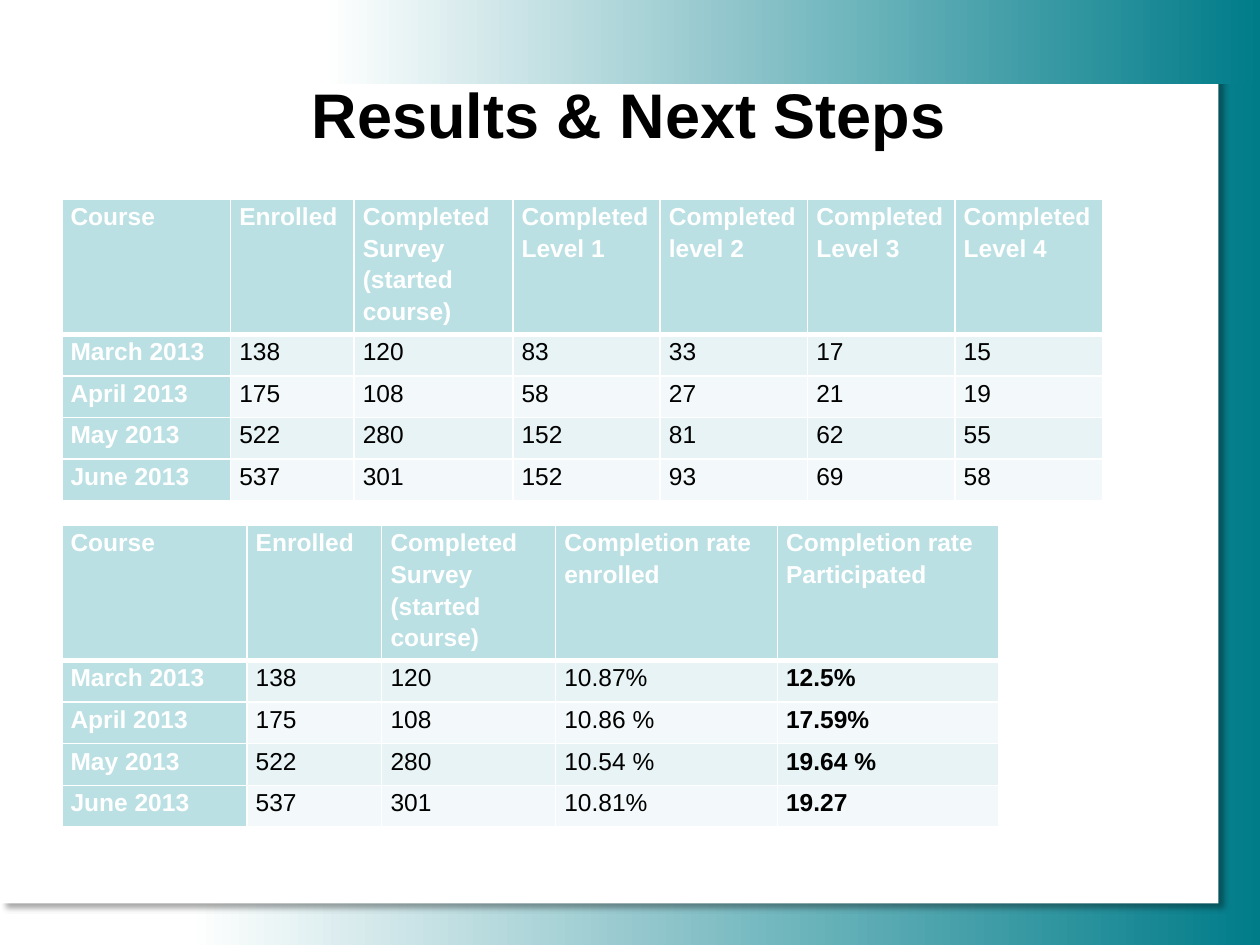
"""Build the course results slide with its two completion tables."""
from dataclasses import dataclass

from lxml import etree
from pptx import Presentation
from pptx import util as u
from pptx.dml.color import RGBColor
from pptx.enum import shapes, text
from pptx.oxml import parse_xml
from pptx.oxml.ns import nsdecls, qn
from pptx.shapes.autoshape import Shape
from pptx.slide import Slide
from pptx.table import _Cell

TEAL = RGBColor(0x00, 0x7C, 0x89)
WHITE = RGBColor(0xFF, 0xFF, 0xFF)
BLACK = RGBColor(0x00, 0x00, 0x00)
HEADER_FILL = RGBColor(0xBB, 0xE0, 0xE3)
BAND_FILLS = (RGBColor(0xE7, 0xF3, 0xF4), RGBColor(0xF3, 0xF9, 0xFA))
FONT = "Arial"
LEFT = 0.49
HEADER_HEIGHT = 1.01
ROW_HEIGHT = 0.33


@dataclass(frozen=True)
class Area:
    left: float
    top: float
    width: float
    height: float

    def lengths(self) -> tuple[u.Length, ...]:
        return tuple(u.Inches(n) for n in (self.left, self.top, self.width, self.height))


@dataclass(frozen=True)
class ResultTable:
    top: float
    widths: tuple[float, ...]
    rows: tuple[tuple[str, ...], ...]
    bold_columns: tuple[int, ...] = (0,)


GRADIENT_BANDS = (Area(0, 0.67, 10, 6.83), Area(1.25, 0, 8.75, 0.67))
PANEL = Area(0, 0, 9.67, 7.17)
TITLE = Area(LEFT, 0.31, 9, 0.94)

LEVELS = ResultTable(
    top=1.58,
    widths=(1.34, 0.98, 1.26, 1.17, 1.17, 1.17, 1.17),
    rows=(
        ("Course", "Enrolled", "Completed Survey (started course)", "Completed Level 1",
         "Completed level 2", "Completed Level 3", "Completed Level 4"),
        ("March 2013", "138", "120", "83", "33", "17", "15"),
        ("April 2013", "175", "108", "58", "27", "21", "19"),
        ("May 2013", "522", "280", "152", "81", "62", "55"),
        ("June 2013", "537", "301", "152", "93", "69", "58"),
    ),
)
RATES = ResultTable(
    top=4.17,
    widths=(1.47, 1.07, 1.38, 1.76, 1.76),
    rows=(
        ("Course", "Enrolled", "Completed Survey (started course)",
         "Completion rate enrolled", "Completion rate Participated"),
        ("March 2013", "138", "120", "10.87%", "12.5%"),
        ("April 2013", "175", "108", "10.86 %", "17.59%"),
        ("May 2013", "522", "280", "10.54 %", "19.64 %"),
        ("June 2013", "537", "301", "10.81%", "19.27"),
    ),
    bold_columns=(0, 4),
)


def add_rectangle(page: Slide, area: Area) -> Shape:
    box = page.shapes.add_shape(shapes.MSO_SHAPE.RECTANGLE, *area.lengths())
    box.shadow.inherit = False
    box.line.fill.background()
    return box


def add_gradient_band(page: Slide, area: Area) -> None:
    fill = add_rectangle(page, area).fill
    fill.gradient()
    fill.gradient_angle = 180
    for stop, color, position in zip(fill.gradient_stops, (TEAL, WHITE), (0, 0.85)):
        stop.color.rgb = color
        stop.position = position


def add_panel(page: Slide) -> None:
    panel = add_rectangle(page, PANEL)
    panel.fill.solid()
    panel.fill.fore_color.rgb = WHITE
    effects = panel.element.spPr.find(qn("a:effectLst"))
    effects.append(parse_xml(
        f'<a:outerShdw {nsdecls("a")} blurRad="{u.Pt(3.1)}" dist="{u.Pt(4.8)}" '
        f'dir="{38 * 60000}" algn="tl" rotWithShape="0">'
        f'<a:srgbClr val="{BLACK}"><a:alpha val="35000"/></a:srgbClr></a:outerShdw>'))


def add_title(page: Slide) -> None:
    frame = page.shapes.add_textbox(*TITLE.lengths()).text_frame
    frame.word_wrap = True
    frame.vertical_anchor = text.MSO_ANCHOR.BOTTOM
    para = frame.paragraphs[0]
    para.text = "Results & Next Steps"
    para.alignment = text.PP_ALIGN.CENTER
    style_font(para.font, 36, BLACK, True)


def style_font(font: text, size: float, color: RGBColor, bold: bool) -> None:
    font.name = FONT
    font.size = u.Pt(size)
    font.color.rgb = color
    font.bold = bold


def set_borders(cell: _Cell, top: float, bottom: float) -> None:
    properties = cell._tc.get_or_add_tcPr()
    sides = {"lnL": 1, "lnR": 1, "lnT": top, "lnB": bottom}
    for index, (side, width) in enumerate(sides.items()):
        line = etree.Element(qn(f"a:{side}"), w=str(u.Pt(width)))
        fill = etree.SubElement(line, qn("a:solidFill"))
        etree.SubElement(fill, qn("a:srgbClr"), val=str(WHITE))
        properties.insert(index, line)


def fill_cell(cell: _Cell, words: str, row: int, column: int, bold: bool) -> None:
    heading = row == 0 or column == 0
    cell.margin_left = cell.margin_right = u.Inches(0.07)
    cell.margin_top = cell.margin_bottom = 0
    cell.fill.solid()
    cell.fill.fore_color.rgb = HEADER_FILL if heading else BAND_FILLS[(row - 1) % 2]
    para = cell.text_frame.paragraphs[0]
    para.text = words
    para.line_spacing = 1.15
    style_font(para.font, 14, WHITE if heading else BLACK, bold)
    set_borders(cell, top=3 if row == 1 else 1, bottom=3 if row == 0 else 1)


def add_results(page: Slide, results: ResultTable) -> None:
    row_count = len(results.rows)
    area = Area(LEFT, results.top, sum(results.widths),
                HEADER_HEIGHT + ROW_HEIGHT * (row_count - 1))
    table = page.shapes.add_table(row_count, len(results.widths), *area.lengths()).table
    table.first_col = True
    for column, width in zip(table.columns, results.widths):
        column.width = u.Inches(width)
    for row, values in enumerate(results.rows):
        table.rows[row].height = u.Inches(ROW_HEIGHT if row else HEADER_HEIGHT)
        for column, words in enumerate(values):
            bold = row == 0 or column in results.bold_columns
            fill_cell(table.cell(row, column), words, row, column, bold)


def main() -> None:
    deck = Presentation()
    deck.slide_width, deck.slide_height = u.Inches(10), u.Inches(7.5)
    page = deck.slides.add_slide(deck.slide_layouts[6])
    lower_band, upper_band = GRADIENT_BANDS
    add_gradient_band(page, lower_band)
    add_panel(page)
    add_gradient_band(page, upper_band)
    add_title(page)
    for results in (LEVELS, RATES):
        add_results(page, results)
    deck.save("out.pptx")


if __name__ == "__main__":
    main()
